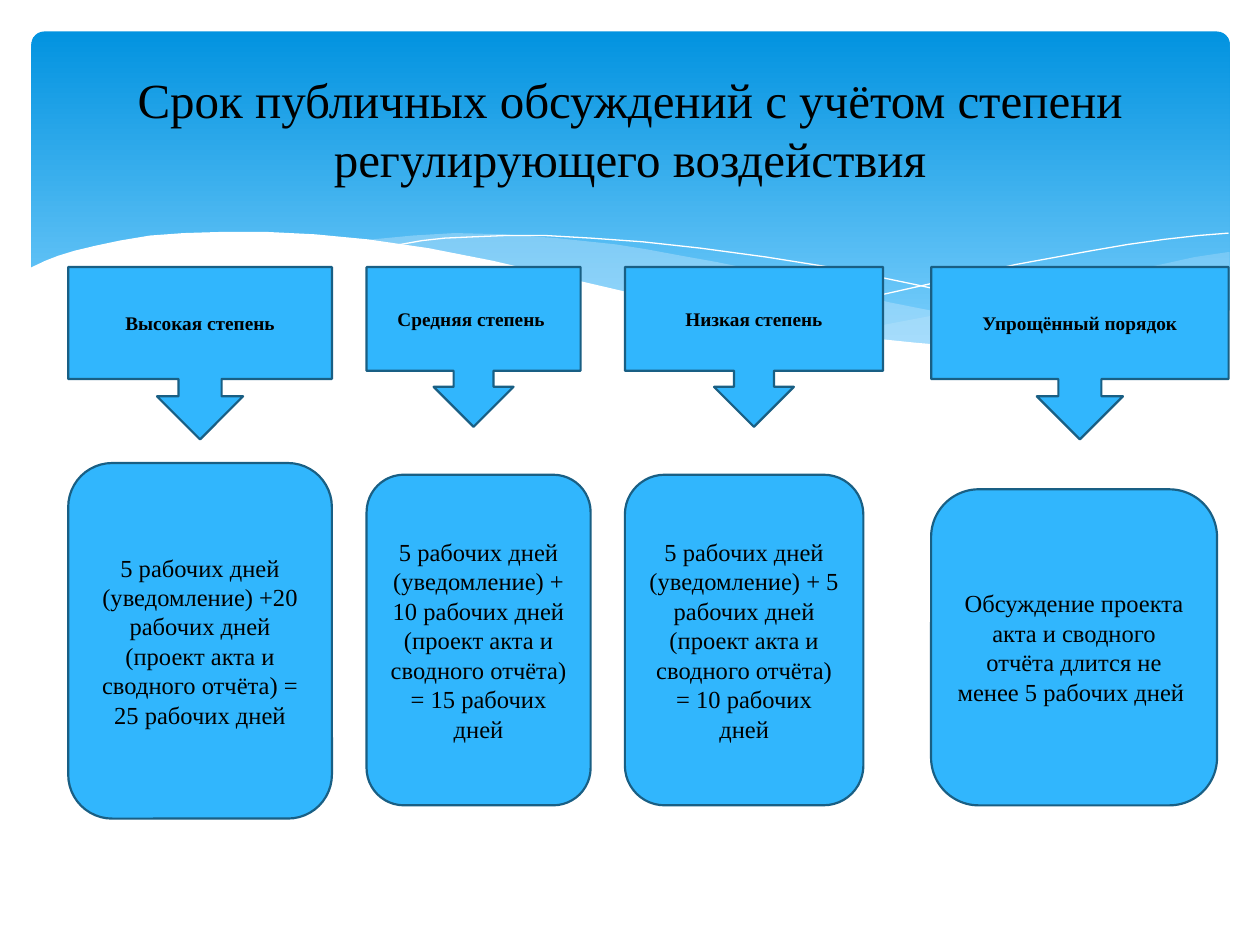
from lxml.etree import SubElement
from pptx import Presentation
from pptx.dml.color import RGBColor
from pptx.enum.shapes import MSO_SHAPE
from pptx.enum.text import MSO_ANCHOR, PP_ALIGN
from pptx.oxml.ns import qn
from pptx.util import Pt

FONT = "Times New Roman"
BLUE, OUTLINE, WHITE, PALE = "31B6FD", "195F84", "FFFFFF", "C6E7FC"
CALLOUT_TOP = 152.6

RIGHT_WAVE = [
    (702, 144), (682.6, 146.9), (663.1, 151.2), (641.5, 155.5), (619.9, 160.6),
    (579.6, 170.6), (542.2, 178.6), (508.3, 185), (475.9, 190.8), (497.5, 193.7),
    (517.7, 195.8), (536.4, 198), (562.3, 199.4), (586.1, 200.2), (607.7, 199.4),
    (627.8, 197.3), (645.8, 194.4), (663.1, 190.8), (678.2, 186.5),
    (693.4, 181.4), (702.7, 177.8), (702.7, 144),
]
MIDDLE_WAVE = [
    (643, 196.6), (623.5, 193.7), (602.6, 190.8), (581, 187.2), (558, 182.9),
    (533.5, 177.8), (508.3, 172.8), (481, 166.3), (452.9, 159.8), (430.6, 154.1),
    (409.7, 149.8), (389.5, 146.2), (370.1, 142.6), (352.1, 139.7),
    (318.2, 136.1), (287.3, 133.9), (259.9, 133.2), (236.2, 134.6),
    (205.9, 137.5), (232.6, 141.1), (260.6, 146.2), (290.9, 151.9),
    (323.3, 159.8), (353.5, 167), (381.6, 172.8), (420.5, 181.4), (445, 185.8),
    (468, 190.1), (489.6, 193), (510.5, 195.8), (529.9, 198), (556.6, 199.4),
    (581, 200.2), (603.4, 200.2), (624.2, 198.7),
]
FALLING_LINE = [
    (222.5, 140.4), (229, 139.7), (241.2, 137.5), (254.2, 136.1), (269.3, 135.4),
    (288.7, 134.6), (311.8, 134.6), (337.7, 136.1), (367.2, 138.2),
    (400.3, 141.8), (437.8, 146.9), (478.8, 153.4), (523.4, 162.7),
    (572.4, 173.5), (598.3, 180.7), (625.7, 187.9), (653, 195.8),
]
RISING_LINE = [
    (441.4, 185), (470.2, 177.1), (500.4, 169.2), (538.6, 160.6), (580.3, 151.2),
    (623.5, 143.3), (644.4, 139.7), (665.3, 136.8), (684.7, 134.6), (702, 133.2),
]
WHITE_WAVE = [
    (703.4, 177.1), (690.5, 182.2), (676.8, 186.5), (662.4, 190.8),
    (647.3, 193.7), (630, 196.6), (612, 198), (592.6, 199.4), (571, 198.7),
    (547.9, 198), (522.7, 195.8), (495.4, 193), (466.6, 188.6), (434.2, 182.9),
    (399.6, 176.4), (362.2, 167.8), (321.8, 158.4), (281.5, 149), (244.8, 141.8),
    (210.2, 136.8), (180, 133.9), (151.9, 132.5), (127.4, 132.5), (105.1, 133.2),
    (85.7, 134.6), (68.4, 137.5), (54.7, 140.4), (42.5, 143.3), (33.1, 146.2),
    (25.9, 149), (16.6, 153.4), (16.6, 236.9), (703.4, 236.9),
]

# heading, (left, width, height) of callout, term, (top, width, height) of term box
DEGREES = [
    ("Высокая степень", (39, 150.7, 98.5),
     "5 рабочих дней (уведомление) +20 рабочих дней (проект акта и сводного "
     "отчёта) = 25 рабочих дней", (264.6, 150.7, 203.2)),
    ("Средняя степень ", (209.5, 122.3, 91.3),
     "5 рабочих дней (уведомление) + 10 рабочих дней (проект акта и сводного "
     "отчёта) = 15 рабочих дней", (271.3, 128, 188.9)),
    ("Низкая степень", (357.1, 147.5, 91.3),
     "5 рабочих дней (уведомление) + 5 рабочих дней (проект акта и сводного "
     "отчёта) = 10 рабочих дней", (271.3, 136.3, 188.9)),
    ("Упрощённый порядок", (532.1, 170, 98.5),
     "Обсуждение проекта акта и сводного отчёта длится не менее 5 рабочих дней ",
     (279.6, 163.4, 180.6)),
]


def color(hex_code):
    return RGBColor.from_string(hex_code)


def write(shape, text, *, size, bold=False):
    frame = shape.text_frame
    frame.word_wrap = True
    frame.vertical_anchor = MSO_ANCHOR.MIDDLE
    paragraph = frame.paragraphs[0]
    paragraph.alignment = PP_ALIGN.CENTER
    run = paragraph.add_run()
    run.text = text
    run.font.name = FONT
    run.font.size = Pt(size)
    run.font.bold = bold
    run.font.color.rgb = color("000000")


def add_banner(slide):
    banner = slide.shapes.add_shape(
        MSO_SHAPE.ROUNDED_RECTANGLE, Pt(18), Pt(18), Pt(684.7), Pt(212.4))
    banner.adjustments[0] = 0.034
    banner.shadow.inherit = False
    banner.line.fill.background()
    banner.fill.gradient()
    banner.fill.gradient_angle = 270
    stops = banner.fill.gradient_stops
    for stop, position, shade in zip(stops, (0, 0.9), ("0293E0", "83D3FE")):
        stop.position = position
        stop.color.rgb = color(shade)


def add_outline(slide, points, close):
    start, *rest = [(Pt(x), Pt(y)) for x, y in points]
    builder = slide.shapes.build_freeform(*start)
    builder.add_line_segments(rest, close=close)
    outline = builder.convert_to_shape()
    outline.shadow.inherit = False
    return outline


def add_wave(slide, points, shade, opacity=100):
    wave = add_outline(slide, points, close=True)
    wave.line.fill.background()
    wave.fill.solid()
    wave.fill.fore_color.rgb = color(shade)
    if opacity < 100:
        tint = wave.fill._xPr.find(f"{qn('a:solidFill')}/{qn('a:srgbClr')}")
        SubElement(tint, qn("a:alpha")).set("val", str(opacity * 1000))


def add_hairline(slide, points):
    hairline = add_outline(slide, points, close=False)
    hairline.fill.background()
    hairline.line.color.rgb = color(WHITE)
    hairline.line.width = Pt(0)


def add_box(slide, preset, left, top, width, height, text, **text_format):
    box = slide.shapes.add_shape(preset, Pt(left), Pt(top), Pt(width), Pt(height))
    box.shadow.inherit = False
    box.fill.solid()
    box.fill.fore_color.rgb = color(BLUE)
    box.line.color.rgb = color(OUTLINE)
    box.line.width = Pt(1.25)
    write(box, text, **text_format)


def main():
    deck = Presentation()
    deck.slide_width, deck.slide_height = Pt(720), Pt(540)
    slide = deck.slides.add_slide(deck.slide_layouts[6])

    add_banner(slide)
    add_wave(slide, RIGHT_WAVE, PALE, opacity=29)
    add_wave(slide, MIDDLE_WAVE, PALE, opacity=40)
    add_hairline(slide, FALLING_LINE)
    add_hairline(slide, RISING_LINE)
    add_wave(slide, WHITE_WAVE, WHITE)

    title = slide.shapes.add_textbox(Pt(36), Pt(26.6), Pt(648), Pt(93.6))
    write(title, "Срок публичных обсуждений с учётом степени "
          "регулирующего воздействия", size=28)

    for heading, (left, width, height), term, term_area in DEGREES:
        add_box(slide, MSO_SHAPE.DOWN_ARROW_CALLOUT, left, CALLOUT_TOP, width,
                height, heading, size=11, bold=True)
        add_box(slide, MSO_SHAPE.ROUNDED_RECTANGLE, left, *term_area, term, size=14)

    deck.save("out.pptx")


if __name__ == "__main__":
    main()
